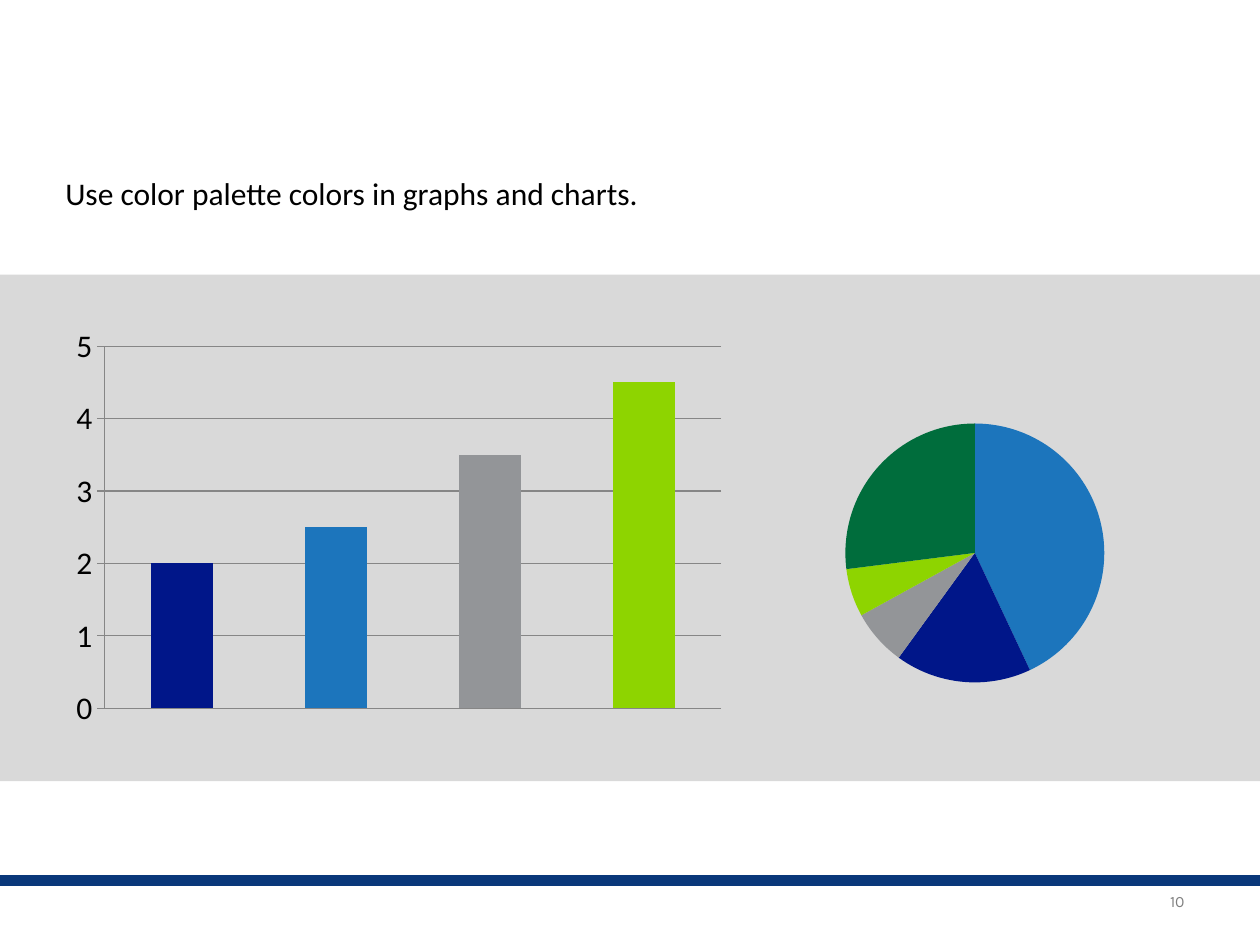
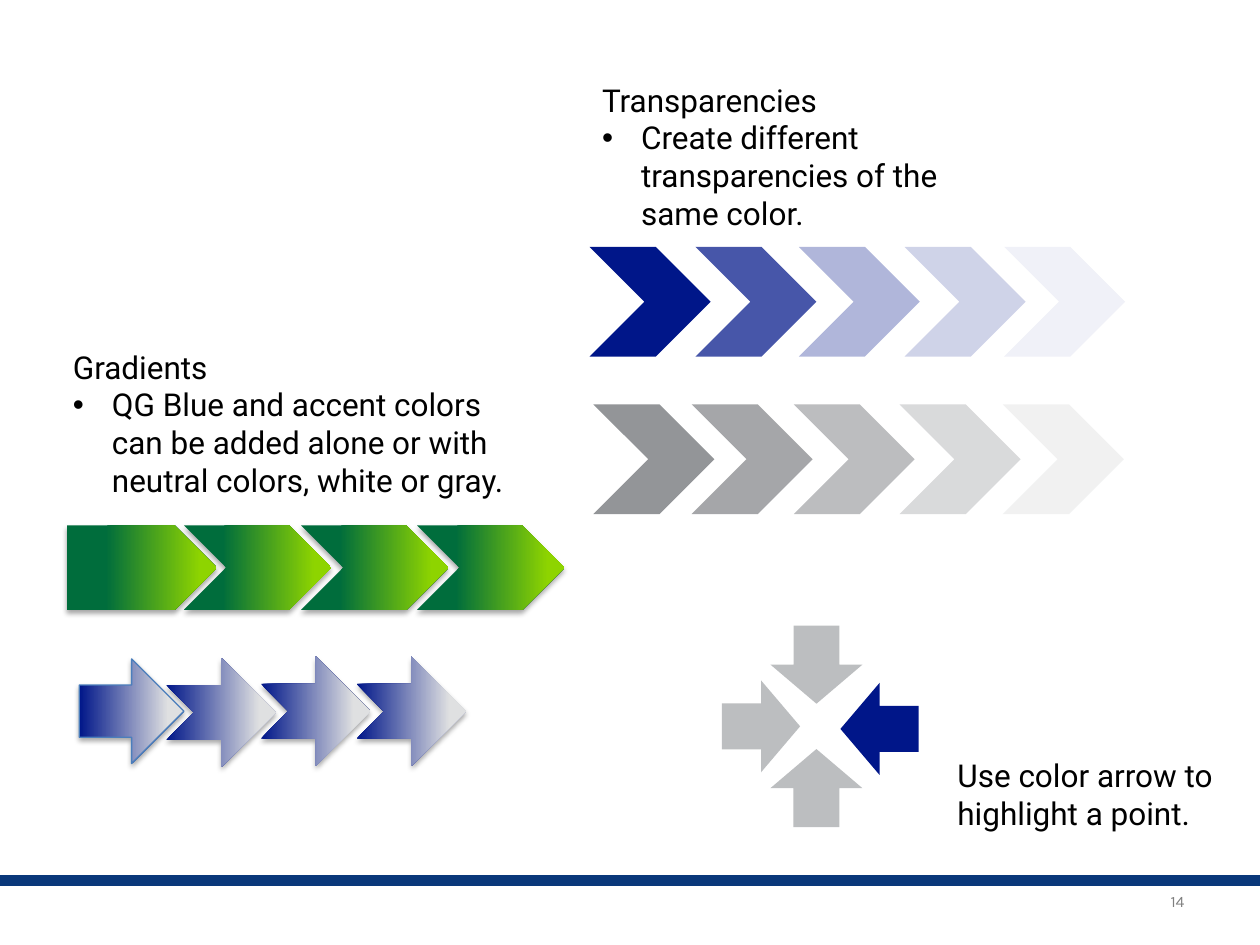
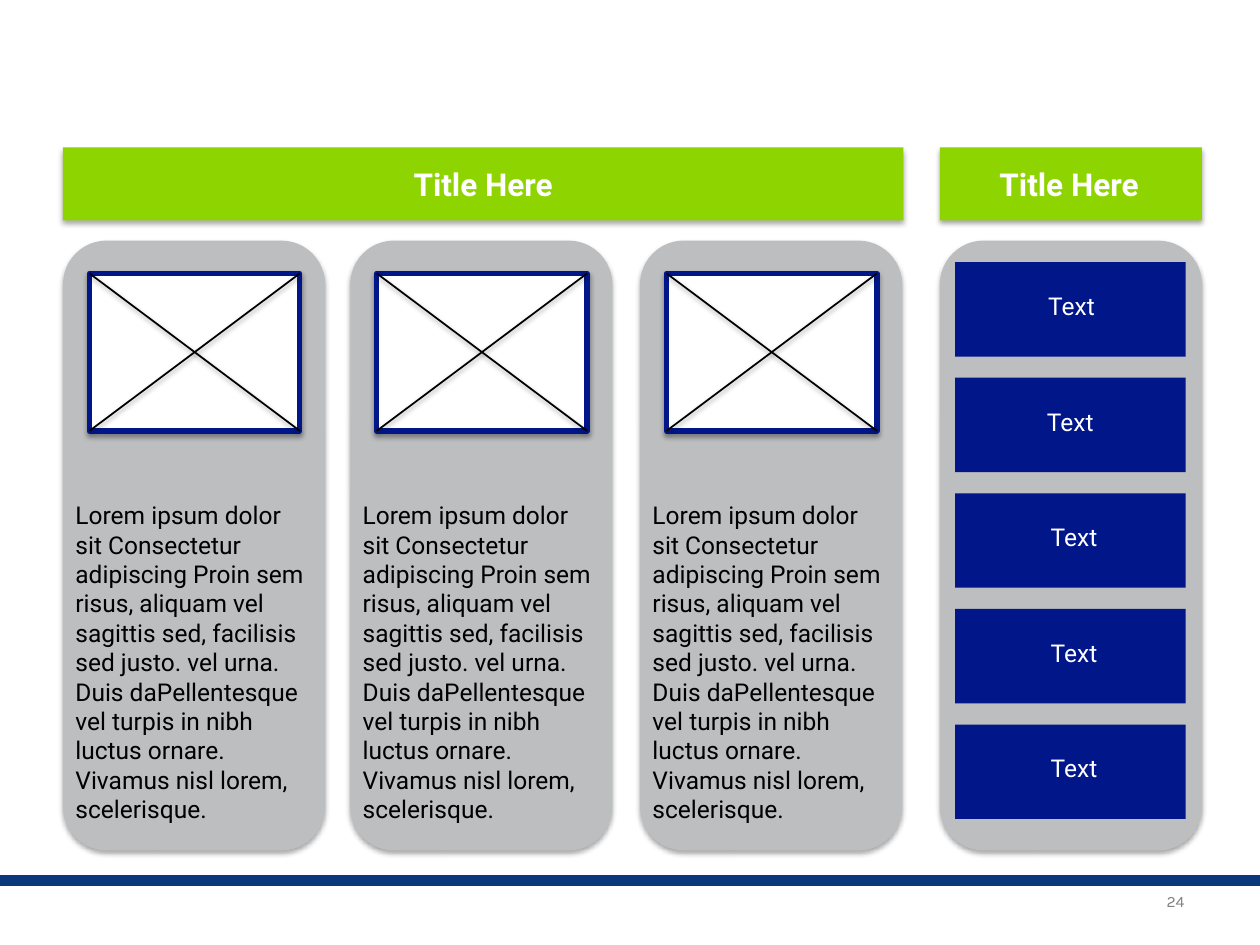
from dataclasses import dataclass
from typing import Optional

from lxml.etree import SubElement as Sub
from pptx import Presentation
from pptx.chart.data import CategoryChartData as Data
from pptx.dml.color import RGBColor as Rgb
from pptx.enum.chart import XL_CHART_TYPE as Chart, XL_TICK_MARK as Tick
from pptx.enum.shapes import MSO_CONNECTOR as Link, MSO_SHAPE as Form
from pptx.enum.text import MSO_ANCHOR as Anchor, MSO_AUTO_SIZE as Size, PP_ALIGN as Align
from pptx.oxml.ns import qn
from pptx.util import Inches, Pt

HEX = {
    "band": "0A387A", "panel": "D9D9D9", "page": "7F7F7F", "navy": "001689",
    "blue": "1C75BC", "gray": "939598", "lime": "8ED400", "green": "006D3C",
    "silver": "BCBEC0", "mist": "DFE0E1", "edge": "4B7EBC", "grid": "868686",
    "black": "000000", "white": "FFFFFF",
}
GREENS = ((26, "green"), (89, "lime"))
BLUES = ((0, "navy"), (85, "mist"))
LOREM = (
    "Lorem ipsum dolor sit Consectetur adipiscing Proin sem risus, aliquam vel "
    "sagittis sed, facilisis sed justo. vel urna. Duis daPellentesque vel turpis "
    "in nibh luctus ornare. Vivamus nisl lorem, scelerisque."
)


@dataclass(frozen=True)
class Box:
    x: float
    y: float
    w: float
    h: float

    def emu(self) -> tuple:
        return tuple(Inches(n) for n in (self.x, self.y, self.w, self.h))


@dataclass(frozen=True)
class Arrow:
    form: Form
    box: Box
    fill: object
    alpha: int = 100
    turn: int = 0
    line: Optional[str] = None
    shade: bool = False


@dataclass(frozen=True)
class Row:
    y: float
    fill: str
    steps: tuple


def tint(name: str) -> Rgb:
    return Rgb.from_string(HEX[name])


def cast(shape, alpha: int = 35, drop: float = 1.8) -> None:
    glow = shape.element.spPr.find(qn("a:effectLst"))
    mark = Sub(glow, qn("a:outerShdw"), blurRad=str(Pt(3.1)), dist=str(Pt(drop)),
               dir="5400000", rotWithShape="0")
    color = Sub(mark, qn("a:srgbClr"), val=HEX["black"])
    Sub(color, qn("a:alpha"), val=str(alpha * 1000))


def draw(slide, form: Form, box: Box, fill, alpha: int = 100, turn: int = 0,
         line: Optional[str] = None, width: float = 0.75, shade: bool = False):
    shape = slide.shapes.add_shape(form, *box.emu())
    shape.rotation = turn
    if isinstance(fill, str):
        shape.fill.solid()
        shape.fill.fore_color.rgb = tint(fill)
        if alpha < 100:
            color = shape.element.spPr.find(qn("a:solidFill"))[0]
            Sub(color, qn("a:alpha"), val=str(alpha * 1000))
    else:
        shape.fill.gradient()
        shape.fill.gradient_angle = 0
        for stop, (place, name) in zip(shape.fill.gradient_stops, fill):
            stop.position = place / 100
            stop.color.rgb = tint(name)
    if line:
        shape.line.color.rgb = tint(line)
        shape.line.width = Pt(width)
    else:
        shape.line.fill.background()
    shape.shadow.inherit = False
    if shade:
        cast(shape)
    return shape


def rule(slide, start: tuple, end: tuple, color: str, width: float):
    ends = [Inches(n) for n in (*start, *end)]
    link = slide.shapes.add_connector(Link.STRAIGHT, *ends)
    link.line.color.rgb = tint(color)
    link.line.width = Pt(width)
    Sub(link.element.spPr, qn("a:effectLst"))
    return link


def write(slide, box: Box, text: str, size: int = 18, font: str = "Roboto",
          color: str = "black", bold: bool = False, align: Align = Align.LEFT,
          anchor: Anchor = Anchor.TOP, grow: bool = True, point: str = "") -> None:
    frame = slide.shapes.add_textbox(*box.emu()).text_frame
    frame.word_wrap = True
    frame.auto_size = Size.SHAPE_TO_FIT_TEXT if grow else Size.NONE
    frame.vertical_anchor = anchor
    paras = [frame.paragraphs[0]]
    paras[0].text = text
    if point:
        paras.append(frame.add_paragraph())
        paras[1].text = point
        props = paras[1]._p.get_or_add_pPr()
        props.set("marL", str(Inches(0.31)))
        props.set("indent", str(Inches(-0.31)))
        Sub(props, qn("a:buFont"), typeface="Arial")
        Sub(props, qn("a:buChar"), char="•")
    for para in paras:
        para.alignment = align
        for run in para.runs:
            run.font.size = Pt(size)
            run.font.name = font
            run.font.bold = bold
            run.font.color.rgb = tint(color)


def plot(slide, kind: Chart, box: Box, vals: tuple, colors: tuple):
    data = Data()
    data.categories = [str(i) for i in range(1, len(vals) + 1)]
    data.add_series("Series 1", vals)
    chart = slide.shapes.add_chart(kind, *box.emu(), data).chart
    chart.has_legend = False
    chart.has_title = False
    chart.font.size = Pt(18)
    chart.font.name = "Calibri"
    chart.font.color.rgb = tint("black")
    series = chart.plots[0].series[0]
    for i, name in enumerate(colors):
        fill = series.points[i].format.fill
        fill.solid()
        fill.fore_color.rgb = tint(name)
    return chart


def page(deck, number: int):
    slide = deck.slides.add_slide(deck.slide_layouts[6])
    rule(slide, (0, 6.99), (10, 6.99), "band", 6)
    write(slide, Box(7.17, 7, 2.33, 0.31), str(number), size=9, font="Karla",
          color="page", align=Align.RIGHT, anchor=Anchor.MIDDLE, grow=False)
    return slide


def charts(deck) -> None:
    slide = page(deck, 10)
    draw(slide, Form.RECTANGLE, Box(0, 2.18, 10, 4.02), "panel")
    pie = plot(slide, Chart.PIE, Box(6.08, 3.17, 3.25, 2.39), (43, 17, 7, 6, 27),
               ("blue", "navy", "gray", "lime", "green"))
    pie.plots[0].vary_by_categories = True
    area = pie.element.find(".//" + qn("c:plotArea")) if hasattr(pie, "element") \
        else pie.plots[0]._element.getparent()
    lay = area.find(qn("c:layout"))
    if lay is None:
        lay = Sub(area, qn("c:layout"))
        area.insert(0, lay)
    spot = Sub(lay, qn("c:manualLayout"))
    for tag, val in (("layoutTarget", "inner"), ("xMode", "edge"), ("yMode", "edge"),
                     ("x", "0.06"), ("y", "0.08"), ("w", "0.9"), ("h", "0.86")):
        Sub(spot, qn("c:" + tag), val=val)

    bars = plot(slide, Chart.COLUMN_STACKED, Box(0.5, 2.53, 5.33, 3.31),
                (2, 2.5, 3.5, 4.5), ("navy", "blue", "gray", "lime"))
    bars.plots[0].vary_by_categories = False
    bars.plots[0].gap_width = 150
    bars.plots[0].overlap = 100
    bars.category_axis.visible = False
    axis = bars.value_axis
    axis.minimum_scale, axis.maximum_scale, axis.major_unit = 0, 5, 1
    axis.major_tick_mark = Tick.OUTSIDE
    axis.has_major_gridlines = True
    for line in (axis.format.line, axis.major_gridlines.format.line):
        line.color.rgb = tint("grid")
        line.width = Pt(0.75)
    write(slide, Box(0.42, 1.33, 5, 0.4), "Use color palette colors in graphs and charts.",
          font="Calibri")


def arrows(deck) -> None:
    slide = page(deck, 14)
    rows = (
        Row(1.96, "navy", ((4.68, 100), (5.52, 72), (6.34, 31), (7.18, 19), (7.97, 6))),
        Row(3.21, "gray", ((4.71, 100), (5.49, 83), (6.3, 62), (7.14, 35), (7.96, 13))),
    )
    items = [Arrow(Form.CHEVRON, Box(x, row.y, 0.96, 0.87), row.fill, alpha)
             for row in rows for x, alpha in row.steps]
    items += [Arrow(Form.RIGHT_ARROW, Box(x, y, 0.62, 0.73), fill, turn=turn)
              for x, y, fill, turn in ((5.73, 5.4, "silver", 0), (6.67, 5.42, "navy", 180),
                                       (6.17, 4.91, "silver", 90), (6.17, 5.89, "silver", 270))]
    items.append(Arrow(Form.PENTAGON, Box(0.53, 4.17, 1.19, 0.67), GREENS, shade=True))
    items += [Arrow(Form.CHEVRON, Box(x, 4.17, 1.17, 0.67), GREENS, shade=True)
              for x in (1.46, 3.31, 2.39)]
    items += [Arrow(Form.NOTCHED_RIGHT_ARROW, Box(x, y, 0.87, 0.87), BLUES, shade=True)
              for x, y in ((2.83, 5.21), (1.32, 5.22), (2.07, 5.21))]
    items.append(Arrow(Form.RIGHT_ARROW, Box(0.63, 5.23, 0.83, 0.83), BLUES,
                       line="edge", shade=True))
    for item in items:
        draw(slide, item.form, item.box, item.fill, alpha=item.alpha, turn=item.turn,
             line=item.line, shade=item.shade)
    write(slide, Box(4.68, 0.59, 2.93, 1.31), "Transparencies",
          point="Create different transparencies of the same color.")
    write(slide, Box(0.48, 2.71, 3.82, 1.31), "Gradients",
          point="QG Blue and accent colors can be added alone or with neutral colors, "
                "white or gray.")
    write(slide, Box(7.5, 5.95, 2.25, 0.71), "Use color arrow to highlight a point.")


def frame(slide, x: float) -> None:
    top, right, low = 2.17, x + 1.67, 3.42
    draw(slide, Form.RECTANGLE, Box(x, top, 1.67, 1.25), "white",
         line="navy", width=3, shade=True)
    for start, end in (((x, top), (right, low)), ((right, top), (x, low))):
        cast(rule(slide, start, end, "black", 1), alpha=38, drop=1.6)


def cards(deck) -> None:
    slide = page(deck, 24)
    cols = (0.5, 2.78, 5.08)
    for x in (*cols, 7.46):
        draw(slide, Form.ROUNDED_RECTANGLE, Box(x, 1.91, 2.08, 4.84), "silver", shade=True)
    for x, wide, left, span in ((0.5, 6.67, 2.38, 2.91), (7.46, 2.08, 7.55, 1.87)):
        draw(slide, Form.RECTANGLE, Box(x, 1.17, wide, 0.58), "lime", shade=True)
        write(slide, Box(left, 1.26, span, 0.4), "Title Here", color="white",
              bold=True, align=Align.CENTER)
    for x in cols:
        frame(slide, x + 0.21)
        write(slide, Box(x, 3.92, 2.08, 2.46), LOREM, size=14)
    for i, x in enumerate((7.84, 7.83, 7.86, 7.86, 7.86)):
        y = 2.08 + i * 3.67 / 4
        draw(slide, Form.RECTANGLE, Box(7.58, y, 1.83, 0.75), "navy")
        write(slide, Box(x, y + 0.18, 1.33, 0.34), "Text", size=14, color="white",
              align=Align.CENTER)


def main() -> None:
    deck = Presentation()
    deck.slide_width, deck.slide_height = Inches(10), Inches(7.5)
    for build in (charts, arrows, cards):
        build(deck)
    deck.save("out.pptx")


if __name__ == "__main__":
    main()
